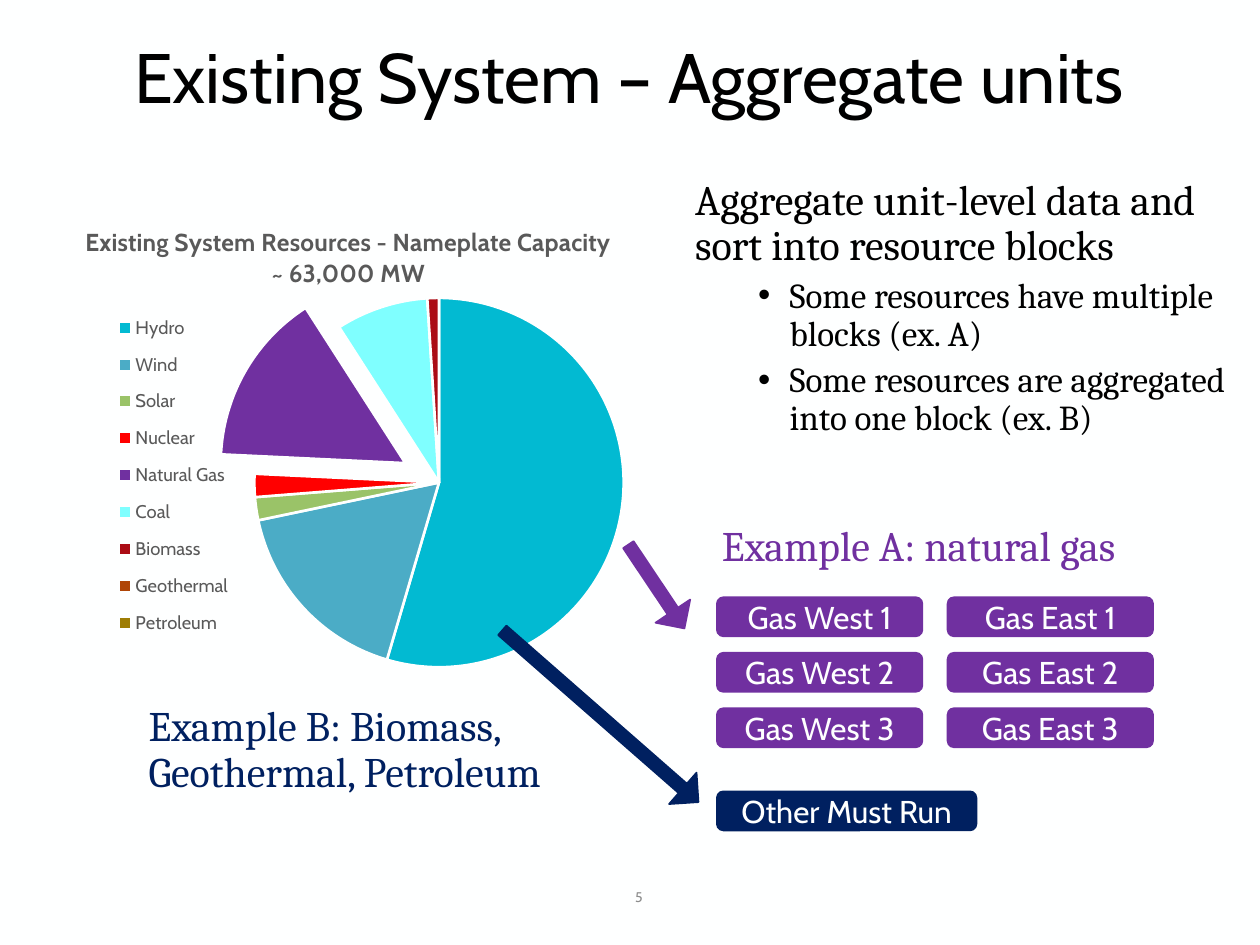
from lxml.etree import SubElement
from pptx import Presentation
from pptx.chart.data import CategoryChartData
from pptx.dml.color import RGBColor
from pptx.enum.chart import XL_CHART_TYPE, XL_LEGEND_POSITION
from pptx.enum.shapes import MSO_SHAPE
from pptx.enum.text import MSO_ANCHOR, PP_ALIGN
from pptx.oxml import parse_xml
from pptx.oxml.ns import nsdecls, qn
from pptx.util import Pt

BLACK = RGBColor(0x00, 0x00, 0x00)
WHITE = RGBColor(0xFE, 0xFF, 0xFF)
GRAY = RGBColor(0x59, 0x59, 0x59)
LIGHT_GRAY = RGBColor(0x8C, 0x8C, 0x8C)
PURPLE = RGBColor(0x70, 0x30, 0xA0)
NAVY = RGBColor(0x00, 0x20, 0x60)

HEADING_FONT = "Cabin"
BODY_FONT = "Cambria"

RESOURCES = [
    ("Hydro", 54, RGBColor(0x02, 0xBA, 0xD2)),
    ("Wind", 17, RGBColor(0x4B, 0xAC, 0xC6)),
    ("Solar", 2, RGBColor(0x9A, 0xC3, 0x68)),
    ("Nuclear", 2, RGBColor(0xFF, 0x00, 0x00)),
    ("Natural Gas", 15, PURPLE),
    ("Coal", 8, RGBColor(0x7F, 0xFF, 0xFF)),
    ("Biomass", 1, RGBColor(0xAB, 0x0C, 0x15)),
    ("Geothermal", 0, RGBColor(0xAF, 0x45, 0x07)),
    ("Petroleum", 0, RGBColor(0x9E, 0x7D, 0x05)),
]


def add_text(tf, text, *, size, color, font=BODY_FONT, align=PP_ALIGN.LEFT,
             line_spacing=0.9, space_before=0, bullet=False, first=True):
    p = tf.paragraphs[0] if first else tf.add_paragraph()
    p.alignment = align
    p.line_spacing = line_spacing
    p.space_before = Pt(space_before)
    if bullet:
        pPr = p._p.get_or_add_pPr()
        pPr.set("marL", str(Pt(54)))
        pPr.set("indent", str(Pt(-18)))
        SubElement(pPr, qn("a:buFont")).set("typeface", "Arial")
        SubElement(pPr, qn("a:buChar")).set("char", "•")
    r = p.add_run()
    r.text = text
    r.font.size = Pt(size)
    r.font.name = font
    r.font.color.rgb = color


def add_box(s, x, y, w, h, anchor=MSO_ANCHOR.TOP):
    tf = s.shapes.add_textbox(Pt(x), Pt(y), Pt(w), Pt(h)).text_frame
    tf.word_wrap = True
    tf.vertical_anchor = anchor
    return tf


def add_filled(s, kind, x, y, w, h, color):
    sp = s.shapes.add_shape(kind, Pt(x), Pt(y), Pt(w), Pt(h))
    sp.shadow.inherit = False
    sp.fill.solid()
    sp.fill.fore_color.rgb = color
    sp.line.color.rgb = color
    sp.line.width = Pt(1)
    return sp


def add_block(s, text, x, y, w, color):
    sp = add_filled(s, MSO_SHAPE.ROUNDED_RECTANGLE, x, y, w, 22.3, color)
    tf = sp.text_frame
    tf.vertical_anchor = MSO_ANCHOR.MIDDLE
    add_text(tf, text, size=18, color=WHITE, font=HEADING_FONT,
             align=PP_ALIGN.CENTER, line_spacing=1.0)


def add_arrow(s, x, y, w, angle, color):
    sp = add_filled(s, MSO_SHAPE.RIGHT_ARROW, x, y, w, 23.8, color)
    sp.adjustments[0] = 0.3
    sp.adjustments[1] = 0.5
    sp.rotation = angle


def set_layout(element, x, y, w, h, target=""):
    for old in element.findall(qn("c:layout")):
        element.remove(old)
    layout = parse_xml(
        f'<c:layout {nsdecls("c")}><c:manualLayout>{target}'
        '<c:xMode val="edge"/><c:yMode val="edge"/>'
        f'<c:x val="{x}"/><c:y val="{y}"/><c:w val="{w}"/><c:h val="{h}"/>'
        '</c:manualLayout></c:layout>')
    position = 1 if element.tag == qn("c:legend") else 0
    element.insert(position, layout)


def add_pie(s):
    data = CategoryChartData()
    data.categories = [name for name, _, _ in RESOURCES]
    data.add_series("Series 1", [value for _, value, _ in RESOURCES])
    chart = s.shapes.add_chart(XL_CHART_TYPE.PIE, Pt(7.2), Pt(117.4),
                               Pt(383.8), Pt(277.9), data).chart
    chart.font.size = Pt(10)
    chart.font.name = HEADING_FONT
    chart.font.color.rgb = BLACK

    chart.has_title = True
    tf = chart.chart_title.text_frame
    lines = ["Existing System Resources - Nameplate Capacity", "~ 63,000 MW"]
    for i, line in enumerate(lines):
        add_text(tf, line, size=14, color=GRAY, font=HEADING_FONT,
                 align=PP_ALIGN.CENTER, line_spacing=1.0, first=i == 0)
    chart.chart_title.include_in_layout = False

    chart.has_legend = True
    legend = chart.legend
    legend.position = XL_LEGEND_POSITION.LEFT
    legend.include_in_layout = False
    legend.font.size = Pt(10.5)
    legend.font.name = HEADING_FONT
    legend.font.color.rgb = GRAY
    set_layout(legend._element, 0.13, 0.2, 0.22, 0.71)

    plot = chart.plots[0]
    plot.vary_by_categories = True
    set_layout(chart._chartSpace.chart.plotArea, 0.36, 0.19, 0.55, 0.76,
               '<c:layoutTarget val="inner"/>')
    series = plot.series[0]
    for i, (name, _, color) in enumerate(RESOURCES):
        point = series.points[i]
        point.format.fill.solid()
        point.format.fill.fore_color.rgb = color
        point.format.line.color.rgb = WHITE
        point.format.line.width = Pt(1.5)
        if name == "Natural Gas":
            dPt = series._element.findall(qn("c:dPt"))[i]
            dPt.insert(1, parse_xml(
                f'<c:explosion {nsdecls("c")} val="21"/>'))


def main():
    prs = Presentation()
    prs.slide_width, prs.slide_height = Pt(720), Pt(540)
    s = prs.slides.add_slide(prs.slide_layouts[6])
    s.background.fill.solid()
    s.background.fill.fore_color.rgb = WHITE

    title = add_box(s, 49, 8.6, 620.6, 74.9, MSO_ANCHOR.MIDDLE)
    add_text(title, "Existing System – Aggregate units", size=40, color=BLACK,
             font=HEADING_FONT, align=PP_ALIGN.CENTER)

    body = add_box(s, 390.2, 98.6, 322.6, 180.7)
    add_text(body, "Aggregate unit-level data and sort into resource blocks",
             size=24, color=BLACK)
    for text in ("Some resources have multiple blocks (ex. A)",
                 "Some resources are aggregated into one block (ex. B)"):
        add_text(body, text, size=20, color=BLACK, space_before=5,
                 bullet=True, first=False)

    number = add_box(s, 344.2, 498.2, 41.8, 28.8, MSO_ANCHOR.MIDDLE)
    add_text(number, "5", size=8, color=LIGHT_GRAY, font=HEADING_FONT,
             align=PP_ALIGN.CENTER, line_spacing=1.0)

    add_pie(s)

    for col, side in enumerate(("West", "East")):
        for row in range(3):
            add_block(s, f"Gas {side} {row + 1}", 409.7 + 131.8 * col,
                      341.3 + 31.7 * row, 117.4, PURPLE)
    add_block(s, "Other Must Run", 409.7, 452.2, 148.3, NAVY)

    add_arrow(s, 346.3, 323.3, 57.6, 56.2, PURPLE)
    add_arrow(s, 268.6, 397.4, 149, 41.2, NAVY)

    example_b = add_box(s, 77.8, 399.6, 322.6, 73.4)
    add_text(example_b, "Example B: Biomass, Geothermal, Petroleum",
             size=24, color=NAVY)
    example_a = add_box(s, 405.4, 296.6, 322.6, 49)
    add_text(example_a, "Example A: natural gas", size=24, color=PURPLE)

    prs.save("out.pptx")


if __name__ == "__main__":
    main()
